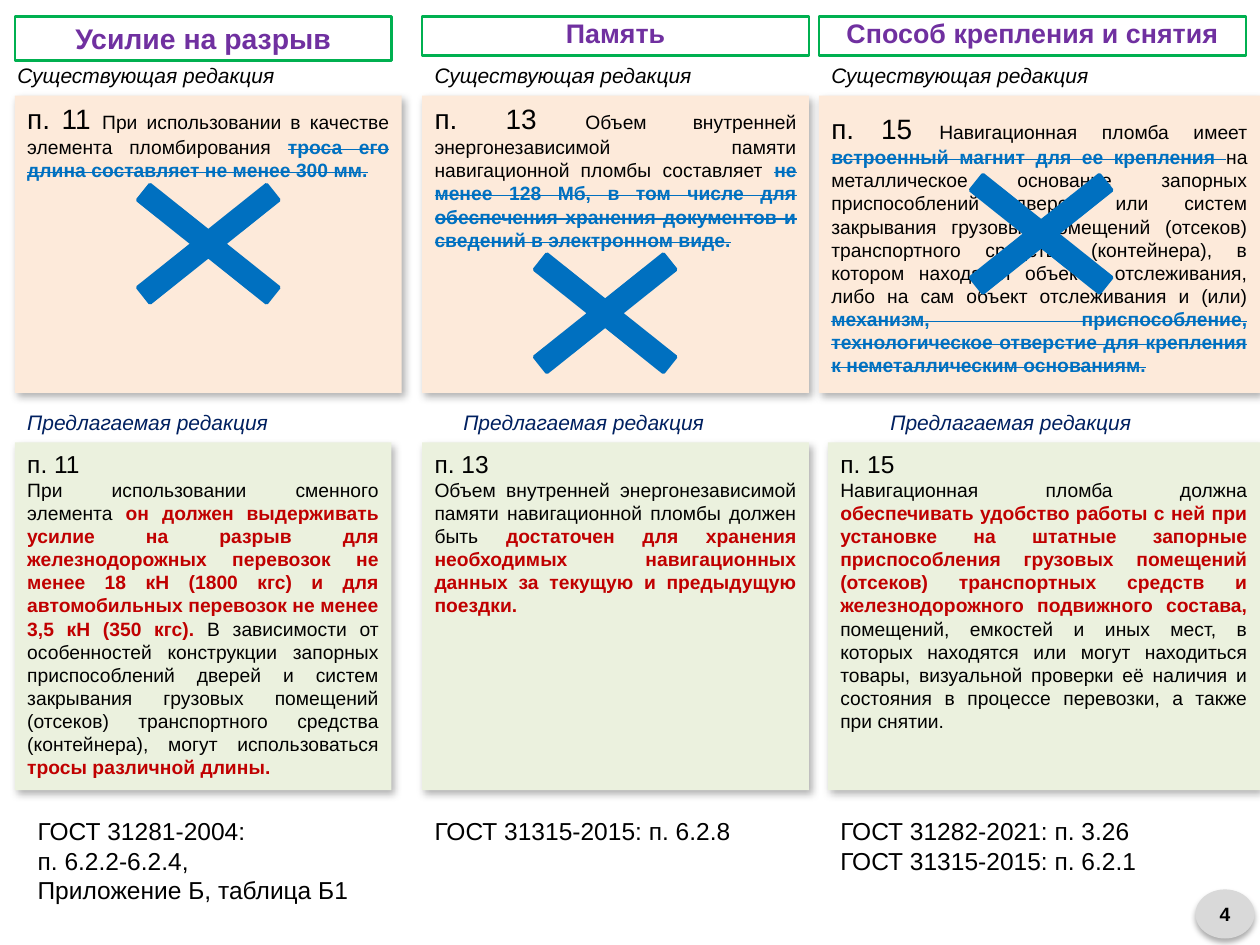
import pptx
import pptx.util
import pptx.dml.color
import pptx.enum.shapes
import pptx.enum.text
from lxml import etree

Cm, Pt = pptx.util.Cm, pptx.util.Pt
Kind = pptx.enum.shapes.MSO_SHAPE
Align = pptx.enum.text.PP_ALIGN
Anchor = pptx.enum.text.MSO_ANCHOR
NS = "http://schemas.openxmlformats.org/drawingml/2006/main"

# Run styles: size, colour, and the marks b(old), i(talic), s(trike)
BIG = (16, "000000", "")
HEAD = (14, "000000", "")
BODY = (11, "000000", "")
CUT = (11, "0070C0", "bs")
NEW = (11, "C00000", "b")
OLD_TAG = (12, "000000", "i")
NEW_TAG = (12, "002060", "i")
PAGE = (11, "000000", "b")


def paint(code):
    return pptx.dml.color.RGBColor.from_string(code)


class Deck:
    font = "Arial"
    green, blue = "00B050", "0070C0"
    peach, lime, grey = "FDEADA", "EBF1DE", "D9D9D9"

    def __init__(self):
        self.show = pptx.Presentation()
        self.show.slide_width, self.show.slide_height = Cm(25.4), Cm(19.05)
        self.slide = self.show.slides.add_slide(self.show.slide_layouts[6])

    def label(self, shape, paras, align, anchor=Anchor.TOP, space=None, wrap=True):
        frame = shape.text_frame
        frame.word_wrap = wrap
        frame.vertical_anchor = anchor
        for n, runs in enumerate(paras):
            para = frame.add_paragraph() if n else frame.paragraphs[0]
            para.alignment = align
            if space:
                para.line_spacing = space
            for text, (size, code, marks) in runs:
                run = para.add_run()
                run.text = text
                run.font.name, run.font.size = self.font, Pt(size)
                run.font.color.rgb = paint(code)
                run.font.bold, run.font.italic = "b" in marks, "i" in marks
                if "s" in marks:
                    run.font._element.set("strike", "sngStrike")

    def shape(self, kind, box, fill=None, line=None, width=1.5):
        shape = self.slide.shapes.add_shape(kind, *map(Cm, box))
        shape.shadow.inherit = False
        if fill:
            shape.fill.solid()
            shape.fill.fore_color.rgb = paint(fill)
        else:
            shape.fill.background()
        if line:
            shape.line.color.rgb = paint(line)
            shape.line.width = Pt(width)
        else:
            shape.line.fill.background()
        return shape

    def shade(self, shape, alpha, blur, dist, angle):
        effects = shape._element.spPr.find(f"{{{NS}}}effectLst")
        outer = etree.SubElement(
            effects, f"{{{NS}}}outerShdw", blurRad=str(Pt(blur)),
            dist=str(Pt(dist)), dir=str(angle * 60000), rotWithShape="0")
        tint = etree.SubElement(outer, f"{{{NS}}}srgbClr", val="000000")
        etree.SubElement(tint, f"{{{NS}}}alpha", val=str(alpha * 1000))

    def title(self, box, text, size, space):
        shape = self.shape(Kind.RECTANGLE, box, line=self.green)
        self.label(shape, [[(text, (size, "7030A0", "b"))]],
                   Align.CENTER, Anchor.MIDDLE, space)

    def panel(self, box, fill, paras, anchor=Anchor.TOP):
        shape = self.shape(Kind.RECTANGLE, box, fill)
        self.shade(shape, 30, 4.5, 2.6, 53)
        self.label(shape, paras, Align.JUSTIFY, anchor)

    def text(self, box, paras, wrap=True):
        shape = self.slide.shapes.add_textbox(*map(Cm, box))
        self.label(shape, paras, Align.LEFT, wrap=wrap)

    def cross(self, left, top):
        shape = self.shape(Kind.MATH_MULTIPLY, (left, top, 5, 3.99),
                           self.blue, self.blue, 2)
        shape.adjustments[0] = 0.1

    def badge(self, box, text):
        shape = self.shape(Kind.OVAL, box, self.grey)
        self.shade(shape, 32, 3.5, 2.2, 90)
        self.label(shape, [[(text, PAGE)]], Align.CENTER, Anchor.MIDDLE)


# Per column: title, (left, width) of each part, wording, cross and notes
COLS = [
    dict(
        name="Усилие на разрыв", size=16.2, space=None, top=(0.3, 7.59, 0.89),
        tags=(0.1, 0.3), old=(0.3, 7.8), new=(0.3, 7.59), item="п. 11 ",
        anchor=Anchor.TOP, cross=(1.7, 2.92), note=(0.51, 6.9, 2.06),
        was=[("При использовании в качестве элемента пломбирования ", BODY),
             ("троса его длина составляет не менее 300 мм.", CUT)],
        now=[("При использовании сменного элемента ", BODY),
             ("он должен выдерживать усилие на разрыв для железнодорожных "
              "перевозок не менее 18 кН (1800 кгс) и для автомобильных "
              "перевозок не менее 3,5 кН (350 кгс). ", NEW),
             ("В зависимости от особенностей конструкции запорных "
              "приспособлений дверей и систем закрывания грузовых помещений "
              "(отсеков) транспортного средства (контейнера), могут "
              "использоваться ", BODY),
             ("тросы различной длины.", NEW)],
        refs=["ГОСТ 31281-2004:", "п. 6.2.2-6.2.4,", "Приложение Б, таблица Б1"]),
    dict(
        name="Память", size=15.3, space=0.8, top=(8.51, 7.8, 0.79),
        tags=(8.51, 9.09), old=(8.51, 7.8), new=(8.51, 7.8), item="п. 13 ",
        anchor=Anchor.TOP, cross=(9.7, 4.32), note=(8.51, 7.8, 0.86),
        was=[("Объем внутренней энергонезависимой памяти навигационной "
              "пломбы составляет ", BODY),
             ("не менее 128 Мб, в том числе для обеспечения хранения "
              "документов и сведений в электронном виде.", CUT)],
        now=[("Объем внутренней энергонезависимой памяти навигационной "
              "пломбы должен быть ", BODY),
             ("достаточен для хранения необходимых навигационных данных за "
              "текущую и предыдущую поездки.", NEW)],
        refs=["ГОСТ 31315-2015: п. 6.2.8"]),
    dict(
        name="Способ крепления и снятия", size=15.3, space=0.8,
        top=(16.51, 8.61, 0.79), tags=(16.51, 17.7), old=(16.51, 8.89),
        new=(16.69, 8.71), item="п. 15 ", anchor=Anchor.MIDDLE,
        cross=(18.49, 2.72), note=(16.69, 8, 1.45),
        was=[("Навигационная пломба имеет ", BODY),
             ("встроенный магнит для ее крепления ", CUT),
             ("на металлическое основание запорных приспособлений дверей или "
              "систем закрывания грузовых помещений (отсеков) транспортного "
              "средства (контейнера), в котором находятся объекты "
              "отслеживания, либо на сам объект отслеживания и (или) ", BODY),
             ("механизм, приспособление, технологическое отверстие для "
              "крепления к неметаллическим основаниям.", CUT)],
        now=[("Навигационная пломба должна ", BODY),
             ("обеспечивать удобство работы с ней при установке на штатные "
              "запорные приспособления грузовых помещений (отсеков) "
              "транспортных средств и железнодорожного подвижного состава, ",
              NEW),
             ("помещений, емкостей и иных мест, в которых находятся или могут "
              "находиться товары, визуальной проверки её наличия и состояния "
              "в процессе перевозки, а также при снятии.", BODY)],
        refs=["ГОСТ 31282-2021: п. 3.26", "ГОСТ 31315-2015: п. 6.2.1"]),
]


def main():
    deck = Deck()
    for col in COLS:
        # Title
        left, width, height = col["top"]
        deck.title((left, 0.33, width, height), col["name"], col["size"], col["space"])

        # Current and proposed wording
        (old, old_w), (new, new_w) = col["old"], col["new"]
        deck.panel((old, 1.93, old_w, 5.99), deck.peach,
                   [[(col["item"], BIG)] + col["was"]], col["anchor"])
        deck.panel((new, 8.92, new_w, 7.01), deck.lime,
                   [[(col["item"], HEAD)], col["now"]])

        # Labels above the panels
        was_x, now_x = col["tags"]
        deck.text((was_x, 1.14, 5.74, 0.76), [[("Существующая редакция", OLD_TAG)]], False)
        deck.text((now_x, 8.13, 5.41, 0.76), [[("Предлагаемая редакция", NEW_TAG)]], False)

        # Cross and standards
        deck.cross(*col["cross"])
        left, width, height = col["note"]
        deck.text((left, 16.33, width, height), [[(ref, HEAD)] for ref in col["refs"]])

    # Page number
    deck.badge((24.1, 17.93, 1.19, 0.99), "4")
    deck.show.save("out.pptx")


if __name__ == "__main__":
    main()
